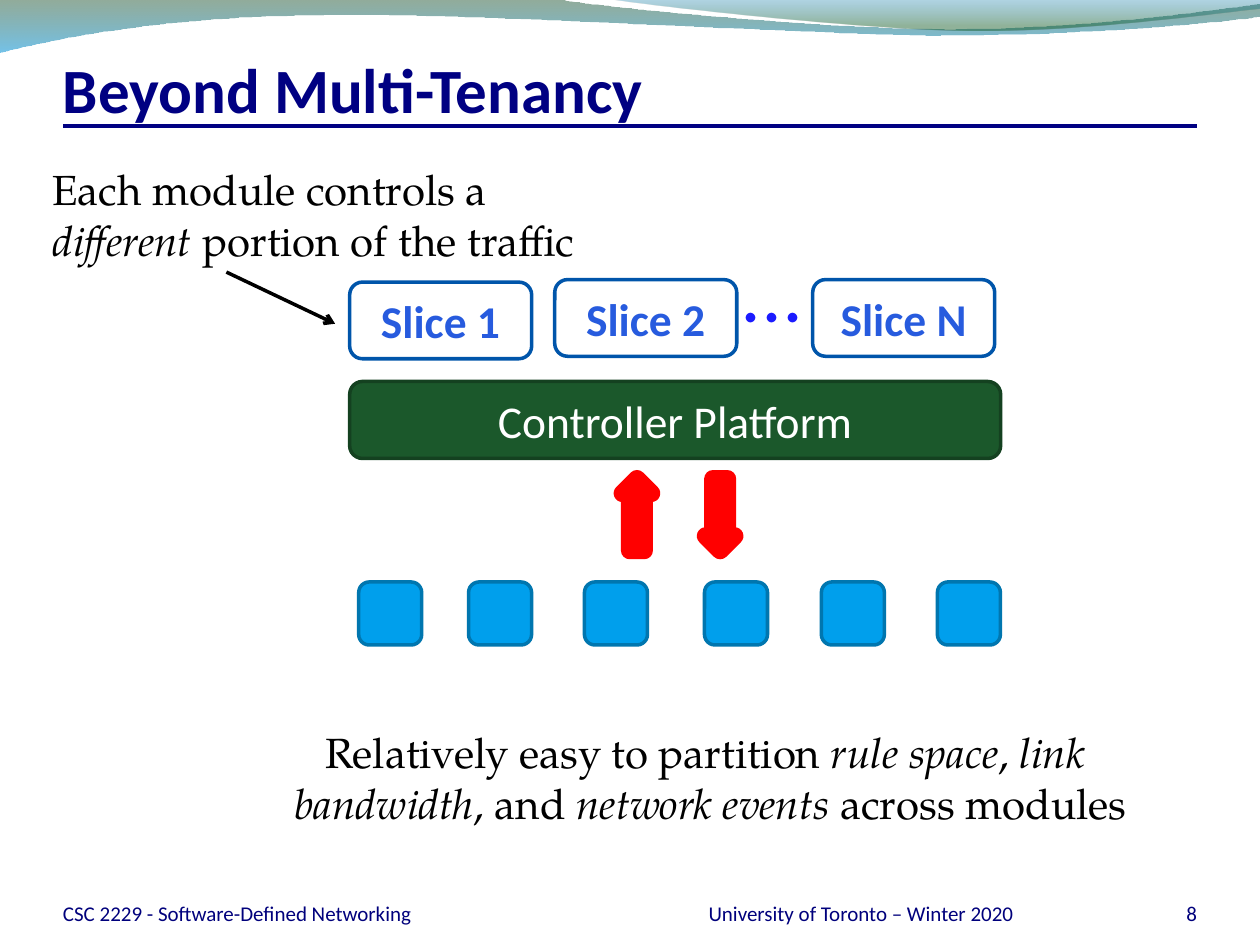
from lxml.etree import SubElement
from pptx import Presentation
from pptx.dml.color import RGBColor
from pptx.enum.shapes import MSO_CONNECTOR, MSO_SHAPE
from pptx.enum.text import MSO_ANCHOR, PP_ALIGN
from pptx.oxml.ns import qn
from pptx.util import Pt

COLORS = {
    "navy": "000082", "foot": "00007C", "black": "000000", "white": "FFFFFF",
    "edge": "0055AA", "slice": "275BDE", "dots": "1B1BFF",
    "green": "1B582B", "dark": "144120", "red": "FF0000",
    "node": "009FEC", "rim": "0076AF",
    "leaf": "0F461E", "sky": "0090D6", "moss": "0D5821",
}
SANS, SERIF = "Calibri", "TeX Gyre Pagella"
LEFT, MID, RIGHT = PP_ALIGN.LEFT, PP_ALIGN.CENTER, PP_ALIGN.RIGHT


def rgb(name):
    return RGBColor.from_string(COLORS[name])


def style(run, size, color, face, bold=False, italic=False):
    font = run.font
    font.size, font.name, font.bold, font.italic = Pt(size), face, bold, italic
    font.color.rgb = rgb(color)


def add_text(slide, box, parts, size, color, face, align=LEFT, bold=False,
             anchor=MSO_ANCHOR.TOP, wrap=True, inset=None):
    """Parts are (text, italic) pairs; None stands for a line break."""
    frame = slide.shapes.add_textbox(*map(Pt, box)).text_frame
    frame.word_wrap, frame.vertical_anchor = wrap, anchor
    if inset is not None:
        frame.margin_left = frame.margin_right = 0
        frame.margin_top, frame.margin_bottom = Pt(inset), 0
    para = frame.paragraphs[0]
    para.alignment = align
    for part in parts:
        if part is None:
            para.add_line_break()
            continue
        run = para.add_run()
        run.text = part[0]
        style(run, size, color, face, bold, part[1])


def add_box(slide, kind, box, fill, line, width=2):
    shape = slide.shapes.add_shape(kind, *map(Pt, box))
    shape.shadow.inherit = False
    shape.fill.solid()
    shape.fill.fore_color.rgb = rgb(fill)
    shape.line.color.rgb = rgb(line)
    shape.line.width = Pt(width)
    return shape


def add_label(slide, box, text, fill, line, color, bold=False):
    frame = add_box(slide, MSO_SHAPE.ROUNDED_RECTANGLE, box, fill, line).text_frame
    frame.text = text
    frame.vertical_anchor = MSO_ANCHOR.MIDDLE
    frame.paragraphs[0].alignment = MID
    style(frame.paragraphs[0].runs[0], 26, color, SANS, bold)


def add_line(slide, ends, color, width, head=False):
    line = slide.shapes.add_connector(MSO_CONNECTOR.STRAIGHT, *map(Pt, ends))
    line.line.color.rgb = rgb(color)
    line.line.width = Pt(width)
    if head:
        SubElement(line.line._get_or_add_ln(), qn("a:tailEnd"), type="arrow")
    SubElement(line._element.spPr, qn("a:effectLst"))


def bend(wave, steps):
    """Join the three line steps of each cubic step into one curve."""
    nodes = iter(list(wave._element.iter(qn("a:lnTo"))))
    for step in steps:
        first = next(nodes)
        if len(step) == 2:
            continue
        first.tag = qn("a:cubicBezTo")
        for _ in range(2):
            node = next(nodes)
            first.append(node[0])
            node.getparent().remove(node)


def add_wave(slide, start, steps, stops):
    """Steps hold one pair (line) or three (curve); stops are
    (position, colour, opacity) from top to bottom."""
    points = [(Pt(x), Pt(y)) for step in steps for x, y in zip(step[::2], step[1::2])]
    pen = slide.shapes.build_freeform(*map(Pt, start))
    pen.add_line_segments(points, close=True)
    wave = pen.convert_to_shape()
    # The tag of an element is fixed, so curves are new nodes
    curve_steps(wave, steps)
    wave.shadow.inherit = False
    wave.line.fill.background()
    wave.fill.gradient()
    wave.fill.gradient_angle = 270
    for stop, (place, color, _) in zip(wave.fill.gradient_stops, stops):
        stop.position = place
        stop.color.rgb = rgb(color)
    for node, (_, _, alpha) in zip(wave._element.spPr.iter(qn("a:srgbClr")), stops):
        SubElement(node, qn("a:alpha"), val=str(alpha * 1000))


def curve_steps(wave, steps):
    bend(wave, steps)


def main():
    deck = Presentation()
    deck.slide_width, deck.slide_height = Pt(720), Pt(540)
    slide = deck.slides.add_slide(deck.slide_layouts[6])

    # Header waves
    add_wave(slide, (0, -0.7), [
        (316.8, -0.7), (342.7, 4.3, 478, 16.6, 545.8, 16.6),
        (614.2, 16.6, 689.8, 6.5, 720, 2.2), (720.7, 9.4),
        (707.8, 11.5, 626.4, 20.2, 537.1, 20.2),
        (447.8, 19.4, 275, 7.2, 185, 8.6), (92.9, 9.4, 33.1, 21.6, -0.7, 30)],
        [(0, "leaf", 45), (1, "sky", 55)])
    add_wave(slide, (344.9, -0.7), [
        (366.5, 2.9, 491, 16.6, 553.7, 17.3),
        (616.3, 18, 691.9, 7.9, 720, 5), (720, -0.7)],
        [(0, "rim", 30), (0.8, "moss", 45)])

    # Title and rule
    add_line(slide, (36, 72, 684, 72), "navy", 2.25)
    add_text(slide, (36, 24, 648, 48), [("Beyond Multi-Tenancy", False)], 36, "navy",
             SANS, bold=True, anchor=MSO_ANCHOR.BOTTOM, inset=3.6)

    # Footer
    for left, width, text, align in [
            (36, 330, "CSC 2229 - Software-Defined Networking", LEFT),
            (378, 228, "University of Toronto – Winter 2020", MID),
            (624, 60, "8", RIGHT)]:
        add_text(slide, (left, 500.4, width, 28.8), [(text, False)], 12, "foot",
                 SANS, align, anchor=MSO_ANCHOR.BOTTOM, inset=0)

    # Slices
    for left, top, text in [(199.8, 161.2, "Slice 1"), (317, 159.8, "Slice 2"),
                            (464.4, 159.8, "Slice N")]:
        add_label(slide, (left, top, 104, 43.8), text, "white", "edge", "slice", True)
    add_text(slide, (416, 132.5, 55, 65.5), [("...", False)], 48, "dots", SERIF,
             wrap=False)

    # Notes
    add_line(slide, (129.4, 155.5, 191.5, 185), "black", 2, head=True)
    add_text(slide, (22.7, 90, 333.4, 65.5), [
        ("Each module controls a ", False), ("different", True),
        (" portion of the traffic", False)], 24, "black", SERIF)
    add_text(slide, (140, 411.8, 532, 65.5), [
        ("Relatively easy to partition ", False), ("rule space", True), (", ", False),
        ("link ", True), None, ("bandwidth", True), (", and ", False),
        ("network events ", True), ("across modules", False)],
        24, "black", SERIF, MID, wrap=False)

    # Controller
    add_label(slide, (199.8, 218, 372, 44), "Controller Platform", "green", "dark",
              "white")

    # Switches
    for left in (205, 267.8, 334, 402.6, 469.4, 535.7):
        add_box(slide, MSO_SHAPE.ROUNDED_RECTANGLE, (left, 332.6, 36, 36), "node", "rim")

    # Arrows between controller and switches
    for left, turn in ((355.7, 0), (403.2, 180)):
        arrow = add_box(slide, MSO_SHAPE.UP_ARROW, (left, 273.6, 16.6, 41), "green",
                        "red", 10)
        arrow.rotation = turn
        SubElement(arrow.line._get_or_add_ln(), qn("a:round"))

    deck.save("out.pptx")


if __name__ == "__main__":
    main()
